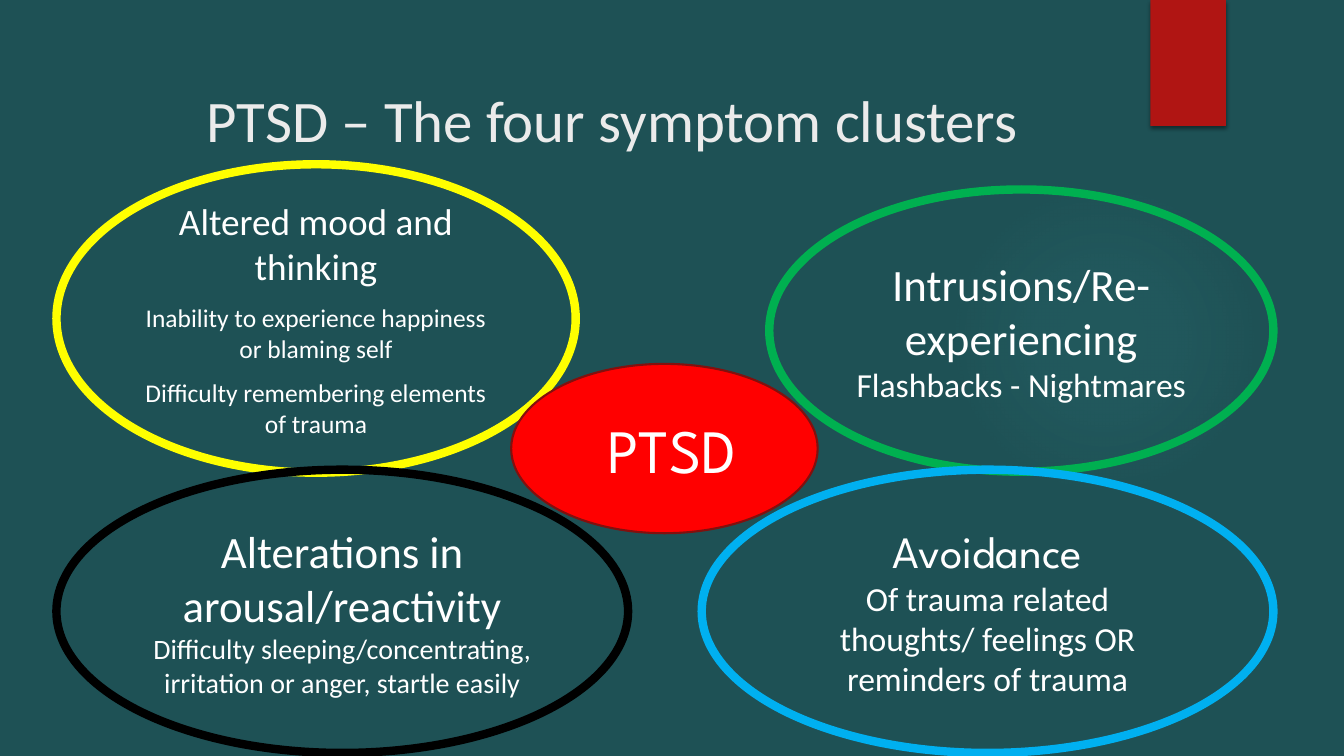
from lxml import etree
from pptx import Presentation
from pptx.dml.color import RGBColor
from pptx.enum.shapes import MSO_SHAPE
from pptx.enum.text import MSO_ANCHOR, PP_ALIGN
from pptx.oxml import parse_xml
from pptx.oxml.ns import nsdecls, qn
from pptx.util import Inches, Pt

BODY, DISPLAY = "Calibri", "League Spartan"
WHITE = "FFFFFF"


def rgb(value):
    return RGBColor.from_string(value)


def add_preset(s, kind, box, fill=None, line=None, width=6):
    sp = s.shapes.add_shape(kind, *map(Inches, box))
    sp.shadow.inherit = False
    if fill:
        sp.fill.solid()
        sp.fill.fore_color.rgb = rgb(fill)
    else:
        sp.fill.background()
    if line:
        sp.line.color.rgb = rgb(line)
        sp.line.width = Pt(width)
    else:
        sp.line.fill.background()
    return sp


def write(tf, lines, color=WHITE, align=PP_ALIGN.CENTER, gap=0):
    """Each line is (text, size, font)."""
    tf.word_wrap = True
    for i, (text, size, font) in enumerate(lines):
        p = tf.add_paragraph() if i else tf.paragraphs[0]
        p.text = text
        p.alignment = align
        p.space_before = Pt(gap if i else 0)
        p.font.size = Pt(size)
        p.font.name = font
        p.font.color.rgb = rgb(color)


def add_backdrop(s):
    s.background.fill.solid()
    s.background.fill.fore_color.rgb = rgb("1E5155")

    # Soft glow
    glow = add_preset(s, MSO_SHAPE.OVAL, (9.41, 1.83, 3.08, 3.08))
    stops = "".join(
        f'<a:gs pos="{pos}000"><a:srgbClr val="50B9C1"><a:alpha val="{alpha}000"/></a:srgbClr></a:gs>'
        for pos, alpha in ((0, 7), (36, 6), (69, 0)))
    spPr = glow._element.spPr
    spPr.replace(spPr.find(qn("a:noFill")), parse_xml(
        f'<a:gradFill {nsdecls("a")}><a:gsLst>{stops}</a:gsLst><a:path path="circle">'
        '<a:fillToRect l="50000" t="50000" r="50000" b="50000"/></a:path></a:gradFill>'))

    # Ribbon with a shadow below it
    ribbon = add_preset(s, MSO_SHAPE.RECTANGLE, (11.41, 0, 0.75, 1.25), "B01513")
    effects = ribbon._element.spPr.find(qn("a:effectLst"))
    shadow = etree.SubElement(effects, qn("a:outerShdw"), blurRad=str(Pt(3)),
                              dist=str(Pt(2)), dir="5400000", rotWithShape="0")
    black = etree.SubElement(shadow, qn("a:srgbClr"), val="000000")
    etree.SubElement(black, qn("a:alpha"), val="45000")


def add_title(s, box, text):
    tf = s.shapes.add_textbox(*map(Inches, box)).text_frame
    tf.margin_left = Inches(1.34)
    write(tf, [(text, 42, BODY)], "EBEBEB", PP_ALIGN.LEFT)


def add_oval(s, box, lines, line, fill=None, width=6, gap=0):
    sp = add_preset(s, MSO_SHAPE.OVAL, box, fill, line, width)
    sp.text_frame.vertical_anchor = MSO_ANCHOR.MIDDLE
    write(sp.text_frame, lines, gap=gap)


def add_clusters(s):
    left, right, lower_top = 0.56, 12.63, 4.66
    lower_w, lower_h = 5.67, 2.81

    add_oval(s, (left, 1.63, 5.15, 3.06), [
        ("Altered mood and thinking", 26.6, BODY),
        ("Inability to experience happiness or blaming self", 18.2, BODY),
        ("Difficulty remembering elements of trauma", 18.2, BODY),
    ], "FFFF00", gap=10)

    # Centre
    add_oval(s, (5.07, 3.61, 3.04, 1.68), [(" PTSD", 44, DISPLAY)],
             "82100E", fill="FF0000", width=1.5)

    add_oval(s, (right - 5, 1.88, 5, 2.8), [
        ("Intrusions/Re-experiencing", 32, BODY),
        ("Flashbacks - Nightmares", 24, BODY),
    ], "00B050")

    # Lower pair
    add_oval(s, (left, lower_top, lower_w, lower_h), [
        ("Alterations in arousal/reactivity", 32, BODY),
        ("Difficulty sleeping/concentrating, irritation or anger, startle easily", 20, BODY),
    ], "000000")
    add_oval(s, (right - lower_w, lower_top, lower_w, lower_h), [
        ("Avoidance", 32, DISPLAY),
        ("Of trauma related thoughts/ feelings OR reminders of trauma", 24, BODY),
    ], "00B0F0")


def main():
    prs = Presentation()
    prs.slide_width, prs.slide_height = Inches(13.33), Inches(7.5)
    s = prs.slides.add_slide(prs.slide_layouts[6])
    add_backdrop(s)
    add_title(s, (0.71, 0.78, 10.87, 1.25), "PTSD – The four symptom clusters")
    add_clusters(s)
    prs.save("out.pptx")


if __name__ == "__main__":
    main()
